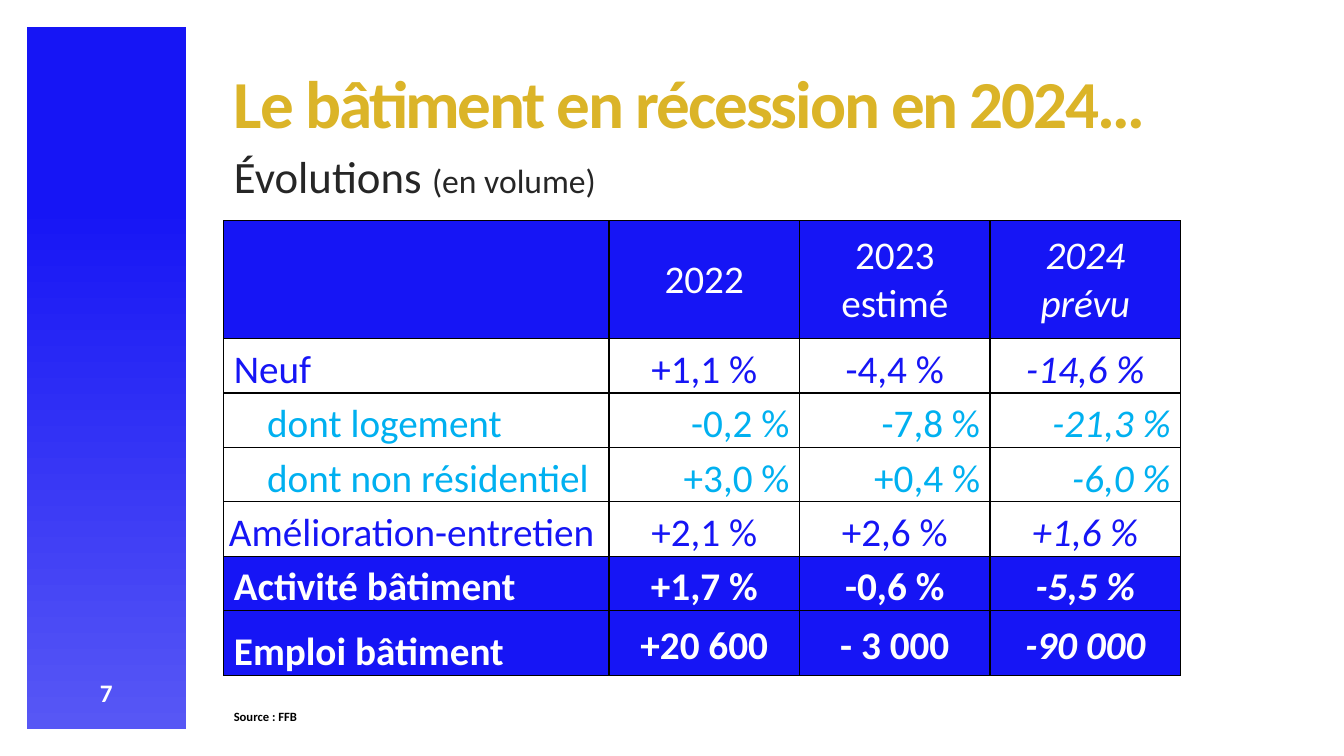
"""Build the slide on the 2024 construction recession."""
from dataclasses import dataclass

from lxml.etree import SubElement
from pptx import Presentation
from pptx.dml.color import RGBColor
from pptx.enum.shapes import MSO_SHAPE as Shape
from pptx.enum.text import MSO_ANCHOR as Anchor, MSO_AUTO_SIZE as AutoSize, PP_ALIGN as Align
from pptx.oxml.ns import qn
from pptx.util import Inches, Pt

COLORS = {
    "blue": "1615F5", "pale_blue": "5757F5", "sky": "00B0F0", "gold": "DBB428",
    "gray": "262626", "white": "FFFFFF", "black": "000000",
}
LEFT = 2.22
COLUMN_WIDTHS = (3.82, 1.89, 1.89, 1.89)


@dataclass(frozen=True)
class Row:
    label: str
    values: tuple[str, str, str]
    color: str
    fill: str = "white"
    height: float = 0.54
    bold: bool = False
    align: Align = Align.CENTER
    anchor: Anchor = Anchor.BOTTOM
    label_spacing: float = 0.5
    value_spacing: float = 0.5
    indent: float = 0
    margin: float = 0.1


ROWS = (
    Row("", ("2022", "2023 estimé", "2024 prévu"), "white", "blue", 1.17,
        anchor=Anchor.MIDDLE, label_spacing=1, value_spacing=1),
    Row("Neuf", ("+1,1 %", "-4,4 %", "-14,6 %"), "blue"),
    Row("dont logement", ("-0,2 %", "-7,8 %", "-21,3 %"), "sky", align=Align.RIGHT, indent=0.33),
    Row("dont non résidentiel", ("+3,0 %", "+0,4 %", "-6,0 %"), "sky", align=Align.RIGHT, indent=0.33),
    Row("Amélioration-entretien", ("+2,1 %", "+2,6 %", "+1,6 %"), "blue", margin=0.05),
    Row("Activité bâtiment", ("+1,7 %", "-0,6 %", "-5,5 %"), "white", "blue", bold=True),
    Row("Emploi bâtiment", ("+20 600", "- 3 000", "-90 000"), "white", "blue", 0.64,
        bold=True, value_spacing=1),
)


def rgb(name: str) -> RGBColor:
    """Return a named colour."""
    return RGBColor.from_string(COLORS[name])


def add_span(para, text: str, *, size: float, color: str, bold: bool = False,
             italic: bool = False, tracking: int = 0) -> None:
    """Add a formatted run to a paragraph."""
    span = para.add_run()
    span.text = text
    font = span.font
    font.name, font.size, font.bold, font.italic = "Calibri", Pt(size), bold, italic
    font.color.rgb = rgb(color)
    if tracking:
        font._element.set("spc", str(tracking))


def setup_box(box, left: float, top: float, width: float, height: float, *,
              align: Align = Align.LEFT, spacing: float = 0.9):
    """Place a text shape and return its first paragraph."""
    box.left, box.top = Inches(left), Inches(top)
    box.width, box.height = Inches(width), Inches(height)
    frame = box.text_frame
    frame.word_wrap, frame.auto_size = True, AutoSize.NONE
    frame.vertical_anchor = Anchor.TOP
    para = frame.paragraphs[0]
    properties = para._p.get_or_add_pPr()
    properties.set("marL", "0")
    properties.set("indent", "0")
    SubElement(properties, qn("a:buNone"))
    para.alignment, para.line_spacing, para.space_before = align, spacing, Pt(0)
    return para


def add_borders(cell) -> None:
    """Draw thin black lines around a cell."""
    properties = cell._tc.get_or_add_tcPr()
    for side in ("lnL", "lnR", "lnT", "lnB"):
        line = SubElement(properties, qn(f"a:{side}"), w=str(Pt(1)))
        fill = SubElement(line, qn("a:solidFill"))
        SubElement(fill, qn("a:srgbClr"), val=COLORS["black"])


def fill_cell(cell, row: Row, column: int, text: str) -> None:
    """Format one table cell and write its text."""
    is_label = column == 0
    add_borders(cell)
    cell.fill.solid()
    cell.fill.fore_color.rgb = rgb(row.fill)
    cell.vertical_anchor = row.anchor
    para = cell.text_frame.paragraphs[0]
    para.alignment = Align.LEFT if is_label else row.align
    para.line_spacing = row.label_spacing if is_label else row.value_spacing
    if is_label:
        cell.margin_left = cell.margin_right = Inches(row.margin)
        para._p.get_or_add_pPr().set("marL", str(Inches(row.indent)))
    if text:
        add_span(para, text, size=28, color=row.color, bold=row.bold, italic=column == 3)


def add_results(page) -> None:
    """Add the table of yearly changes."""
    frame = page.shapes.add_table(
        len(ROWS), len(COLUMN_WIDTHS), Inches(LEFT), Inches(2.19),
        Inches(sum(COLUMN_WIDTHS)), Inches(sum(row.height for row in ROWS)))
    table = frame.table
    table.first_row = table.horz_banding = False
    for column, width in zip(table.columns, COLUMN_WIDTHS):
        column.width = Inches(width)
    for index, row in enumerate(ROWS):
        table.rows[index].height = Inches(row.height)
        for column, text in enumerate((row.label, *row.values)):
            fill_cell(table.cell(index, column), row, column, text)


def add_sidebar(page) -> None:
    """Add the gradient band and the page number."""
    band = page.shapes.add_shape(Shape.RECTANGLE, Inches(0.27), Inches(0.27), Inches(1.58), Inches(6.96))
    band.shadow.inherit = False
    band.line.fill.background()
    band.fill.gradient()
    band.fill.gradient_angle = 270
    for stop, position, color in zip(band.fill.gradient_stops, (0.25, 1), ("blue", "pale_blue")):
        stop.position = position
        stop.color.rgb = rgb(color)
    number = page.shapes.add_textbox(0, 0, 0, 0)
    para = setup_box(number, 0.27, 6.67, 1.57, 0.4, align=Align.CENTER, spacing=1)
    add_span(para, "7", size=18, color="white", bold=True)


def main() -> None:
    """Create and save the deck."""
    deck = Presentation()
    deck.slide_width, deck.slide_height = Inches(13.33), Inches(7.5)
    page = deck.slides.add_slide(deck.slide_layouts[1])
    add_sidebar(page)
    title = setup_box(page.shapes.title, LEFT, 0.65, 10.66, 0.83)
    add_span(title, "Le bâtiment en récession en 2024…", size=48, color="gold", bold=True, tracking=-150)
    subtitle = setup_box(page.placeholders[1], LEFT, 1.49, 10.66, 0.5)
    add_span(subtitle, "Évolutions ", size=32, color="gray")
    add_span(subtitle, "(en volume)", size=24, color="gray")
    add_results(page)
    source = setup_box(page.shapes.add_textbox(0, 0, 0, 0), LEFT, 7, 8.98, 0.24)
    add_span(source, "Source : FFB", size=9, color="black", bold=True)
    deck.save("out.pptx")


if __name__ == "__main__":
    main()
